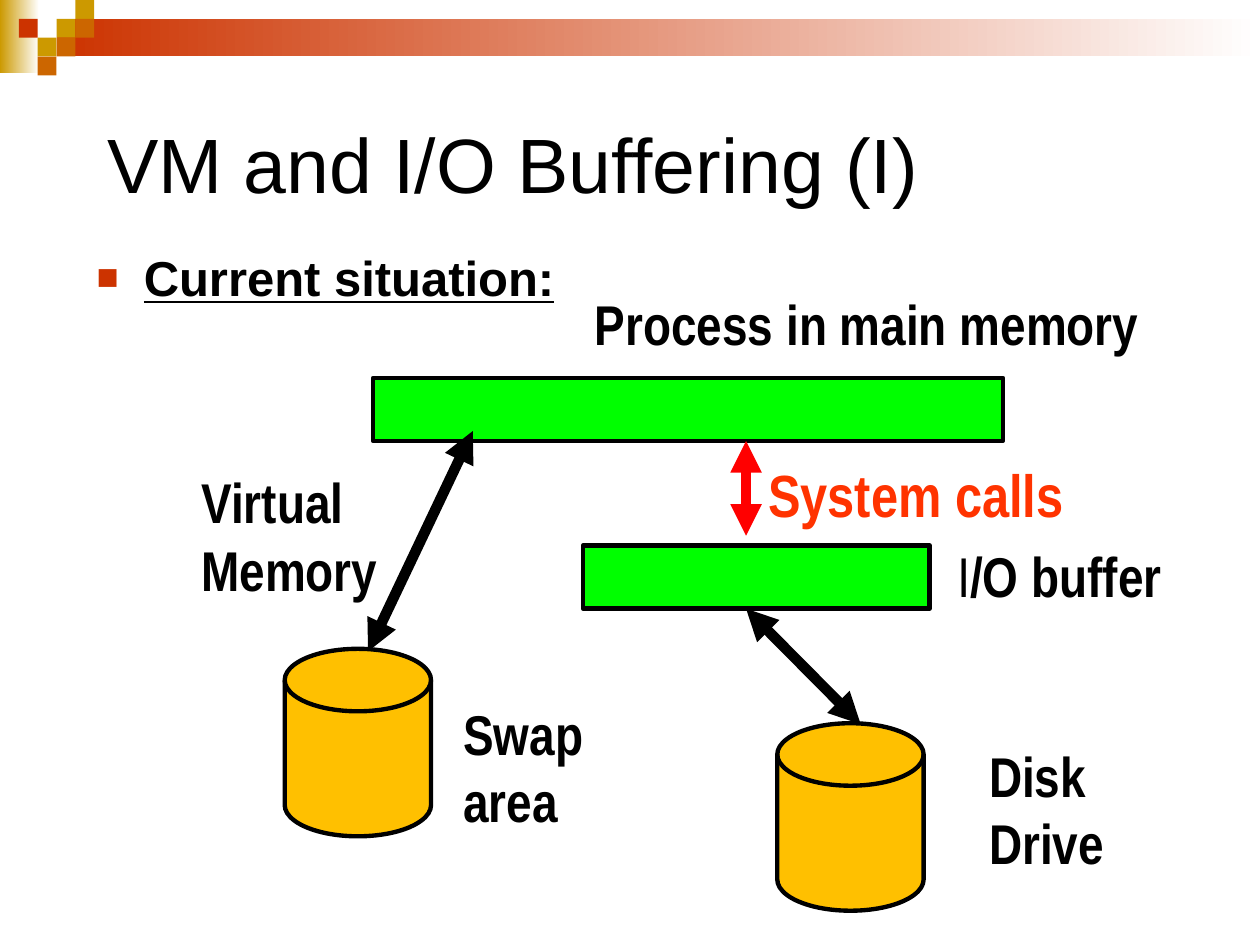
"""Build the slide on virtual memory and I/O buffering."""
from lxml import etree
from pptx import Presentation
from pptx.dml.color import RGBColor
from pptx.enum.shapes import MSO_CONNECTOR, MSO_SHAPE
from pptx.enum.text import MSO_ANCHOR, MSO_AUTO_SIZE, PP_ALIGN
from pptx.oxml.ns import qn
from pptx.util import Cm, Pt

RECTANGLE = MSO_SHAPE.RECTANGLE
DISK = MSO_SHAPE.FLOWCHART_MAGNETIC_DISK
STRAIGHT = MSO_CONNECTOR.STRAIGHT
MIDDLE, TOP = MSO_ANCHOR.MIDDLE, MSO_ANCHOR.TOP
FIXED, GROW = MSO_AUTO_SIZE.NONE, MSO_AUTO_SIZE.SHAPE_TO_FIT_TEXT
LEFT, CENTER = PP_ALIGN.LEFT, PP_ALIGN.CENTER
BLACK, RED, GREEN, AMBER = "000000", "FF0000", "00FF00", "FFC000"
WHITE, RUST, ORANGE, GOLD = "FFFFFF", "CC3300", "CC6600", "CC9900"
SQUARE = 0.38

color = RGBColor.from_string

deck = Presentation()
deck.slide_width, deck.slide_height = Cm(25.4), Cm(19.05)
page = deck.slides.add_slide(deck.slide_layouts[6])


def add_block(kind, place, fill, outlined=False):
    block = page.shapes.add_shape(kind, *map(Cm, place))
    block.shadow.inherit = False
    block.fill.solid()
    block.fill.fore_color.rgb = color(fill)
    if outlined:
        block.line.color.rgb = color(BLACK)
        block.line.width = Pt(2.5)
    else:
        block.line.fill.background()
    return block


def add_label(place, lines, size=32, ink=BLACK, font="Arial Narrow", bold=True,
              align=LEFT, anchor=TOP, wrap=True, fit=GROW):
    box = page.shapes.add_textbox(*map(Cm, place))
    frame = box.text_frame
    frame.word_wrap = wrap
    frame.auto_size = fit
    frame.vertical_anchor = anchor
    for index, line in enumerate(lines):
        para = frame.paragraphs[0] if index == 0 else frame.add_paragraph()
        para.alignment = align
        para.font.name = font
        para.font.size = Pt(size)
        para.font.bold = bold
        para.font.color.rgb = color(ink)
        para.add_run().text = line
    return frame.paragraphs[0]


for place, start in (((0, 0, 0.79, 1.47), GOLD), ((1.14, 0.38, 24.26, 0.76), RUST)):
    band = add_block(RECTANGLE, place, start)
    band.fill.gradient()
    band.fill.gradient_angle = 0
    for stop, shade in zip(band.fill.gradient_stops, (start, WHITE)):
        stop.color.rgb = color(shade)

for shade, cells in (
    (GOLD, ((3, 1), (4, 0), (2, 2))),
    (ORANGE, ((4, 1), (3, 2), (2, 3))),
    (RUST, ((1, 1),)),
):
    for column, row in cells:
        add_block(RECTANGLE, (column * SQUARE, row * SQUARE, SQUARE, SQUARE), shade)

add_label((1.91, 1.7, 22.81, 3.18), ["VM and I/O Buffering (I)"], 44,
          font="Arial", bold=False, anchor=MIDDLE, fit=FIXED)

heading = add_label((1.7, 4.87, 21.59, 2.11), ["Current situation:"], 28,
                    font="Arial", fit=FIXED)
heading.font.underline = True
heading.space_before = Pt(5.6)
properties = heading._p.get_or_add_pPr()
properties.set("marL", str(Cm(0.95)))
properties.set("indent", str(Cm(-0.95)))
defaults = properties.find(qn("a:defRPr"))
bullet_color = etree.Element(qn("a:buClr"))
etree.SubElement(bullet_color, qn("a:srgbClr"), val=RUST)
for part in (
    bullet_color,
    etree.Element(qn("a:buSzPct"), val="75000"),
    etree.Element(qn("a:buFont"), typeface="Arial"),
    etree.Element(qn("a:buChar"), char="■"),
):
    defaults.addprevious(part)

add_block(RECTANGLE, (7.52, 7.62, 12.7, 1.27), GREEN, True)
add_block(RECTANGLE, (11.75, 11, 6.99, 1.27), GREEN, True)

add_label((11.23, 5.72, 12.5, 1.6), ["Process in main memory"], align=CENTER)
for place, lines in (
    ((9.09, 13.97, 2.95, 2.97), ["Swap", "area"]),
    ((19.69, 14.82, 2.82, 2.97), ["Disk", "Drive"]),
    ((3.81, 9.31, 4.06, 2.97), ["Virtual", "Memory"]),
):
    add_label(place, lines, wrap=False)
add_label((15.24, 9.1, 7.62, 1.7), ["System calls"], 34, "FF3300")

buffer_label = add_label((19.05, 10.8, 5.28, 1.6), ["I"], bold=False)
span = buffer_label.add_run()
span.text = "/O buffer"
span.font.bold = True

for ends, ink in (
    ((9.53, 8.69, 7.42, 13.13), BLACK),
    ((15.04, 8.89, 15.04, 10.8), RED),
    ((15.04, 12.27, 17.35, 14.6), BLACK),
):
    arrow = page.shapes.add_connector(STRAIGHT, *map(Cm, ends))
    arrow.line.color.rgb = color(ink)
    arrow.line.width = Pt(6)
    outline = arrow.line._get_or_add_ln()
    for end in ("a:headEnd", "a:tailEnd"):
        etree.SubElement(outline, qn(end), type="triangle")
    etree.SubElement(arrow._element.spPr, qn("a:effectLst"))

for left, top in ((5.74, 13.08), (15.67, 14.58)):
    add_block(DISK, (left, top, 2.95, 3.78), AMBER, True)

deck.save("out.pptx")
